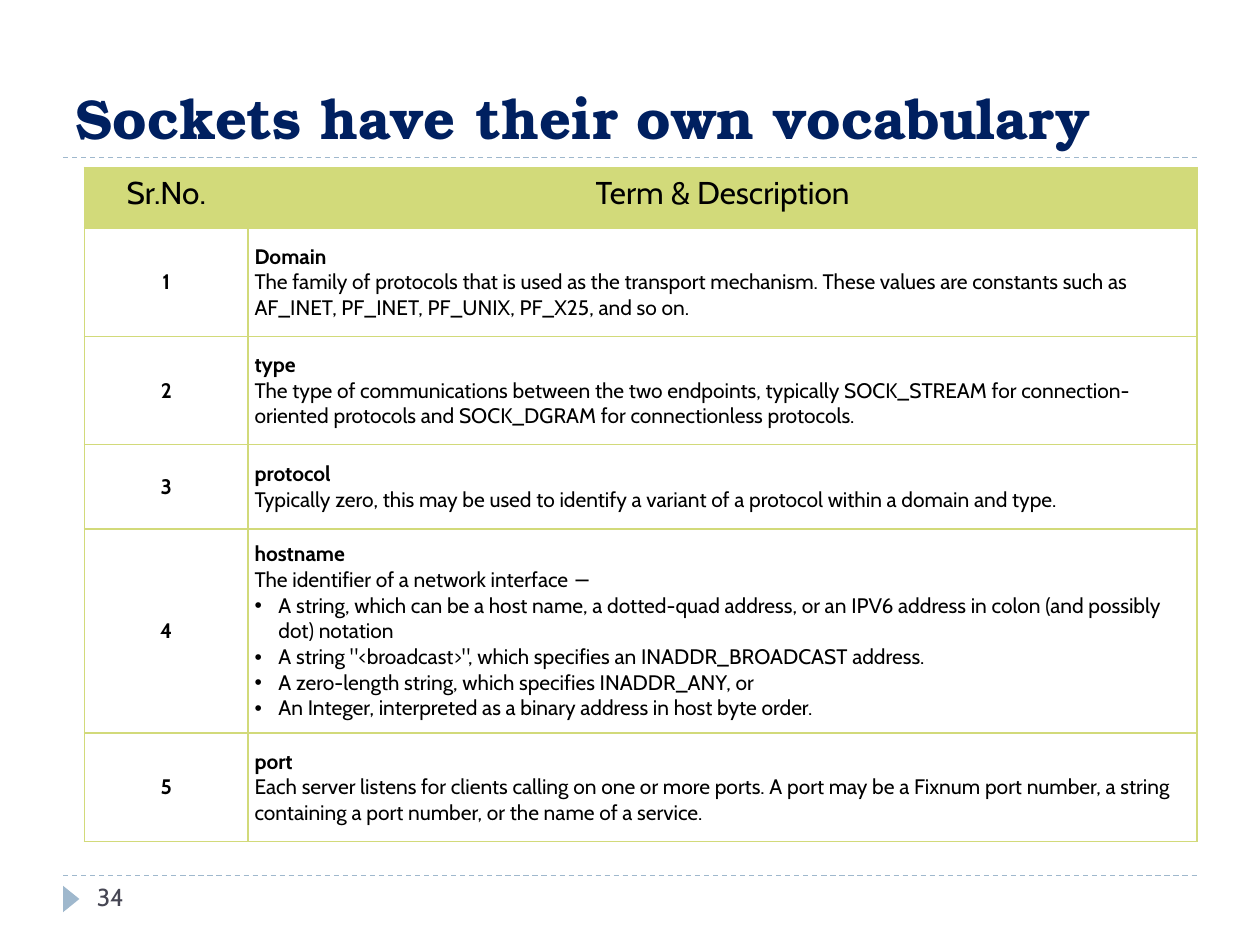
from lxml.etree import SubElement
from pptx import Presentation
from pptx.dml.color import RGBColor
from pptx.enum.dml import MSO_LINE
from pptx.enum.shapes import MSO_CONNECTOR, MSO_SHAPE
from pptx.enum.text import MSO_ANCHOR, MSO_AUTO_SIZE, PP_ALIGN
from pptx.oxml.ns import qn
from pptx.util import Inches, Pt

NAVY = RGBColor(0x00, 0x20, 0x60)
BLUE = RGBColor(0x9F, 0xB8, 0xCD)
GREY = RGBColor(0x46, 0x46, 0x53)
LIME = RGBColor(0xD2, 0xDA, 0x7A)
BLACK = RGBColor(0, 0, 0)

HEADS = ["Sr.No.", "Term & Description"]
COLS = [1.3, 7.53]
ROWS = [0.48, 0.86, 0.86, 0.67, 1.62, 0.86]
# Term, description, bullets
TERMS = [
    ("Domain", "The family of protocols that is used as the transport mechanism. "
     "These values are constants such as AF_INET, PF_INET, PF_UNIX, PF_X25, and so on.", []),
    ("type", "The type of communications between the two endpoints, typically SOCK_STREAM "
     "for connection-oriented protocols and SOCK_DGRAM for connectionless protocols.", []),
    ("protocol", "Typically zero, this may be used to identify a variant of a protocol "
     "within a domain and type.", []),
    ("hostname", "The identifier of a network interface −", [
        "A string, which can be a host name, a dotted-quad address, or an IPV6 address "
        "in colon (and possibly dot) notation",
        'A string "<broadcast>", which specifies an INADDR_BROADCAST address.',
        "A zero-length string, which specifies INADDR_ANY, or",
        "An Integer, interpreted as a binary address in host byte order."]),
    ("port", "Each server listens for clients calling on one or more ports. A port may be a "
     "Fixnum port number, a string containing a port number, or the name of a service.", []),
]


def write(frame, text, first=True, size=12, color=BLACK, face="Cabin",
          bold=False, align=PP_ALIGN.LEFT, bullet=False):
    """Put text in the first paragraph of a frame, or in a new one."""
    para = frame.paragraphs[0] if first else frame.add_paragraph()
    if bullet:
        props = para._p.get_or_add_pPr()
        props.set("marL", str(Inches(0.19)))
        props.set("indent", str(-Inches(0.19)))
        SubElement(props, qn("a:buFont"), typeface="Arial")
        SubElement(props, qn("a:buChar"), char="•")
    para.alignment = align
    run = para.add_run()
    run.text = text
    font = run.font
    font.name, font.size, font.bold = face, Pt(size), bold
    font.color.rgb = color


class Deck:
    def __init__(self):
        self.file = Presentation()
        self.file.slide_width, self.file.slide_height = Inches(10), Inches(7.5)
        self.slide = self.file.slides.add_slide(self.file.slide_layouts[5])
        self.shapes = self.slide.shapes

    def rule(self, y):
        line = self.shapes.add_connector(
            MSO_CONNECTOR.STRAIGHT, Inches(0.5), Inches(y), Inches(9.5), Inches(y))
        line.line.color.rgb = BLUE
        line.line.width = Pt(0.75)
        line.line.dash_style = MSO_LINE.DASH
        SubElement(line._element.spPr, qn("a:effectLst"))

    def marker(self, x, y, w, h):
        mark = self.shapes.add_shape(
            MSO_SHAPE.ISOSCELES_TRIANGLE, Inches(x), Inches(y), Inches(w), Inches(h))
        mark.rotation = 90
        mark.shadow.inherit = False
        mark.fill.solid()
        mark.fill.fore_color.rgb = BLUE
        mark.line.fill.background()

    def title(self, text, x, y, w, h):
        head = self.shapes.title
        head.left, head.top, head.width, head.height = map(Inches, (x, y, w, h))
        frame = head.text_frame
        frame.auto_size = MSO_AUTO_SIZE.NONE
        frame.vertical_anchor = MSO_ANCHOR.BOTTOM
        write(frame, text, size=32, color=NAVY, face="TeX Gyre Bonum", bold=True)

    def label(self, text, x, y, w, h, **style):
        frame = self.shapes.add_textbox(*map(Inches, (x, y, w, h))).text_frame
        frame.word_wrap = True
        write(frame, text, **style)

    def table(self, x, y, cols, rows):
        grid = self.shapes.add_table(
            len(rows), len(cols), Inches(x), Inches(y),
            Inches(sum(cols)), Inches(sum(rows))).table
        grid.first_row = grid.horz_banding = False
        for col, width in zip(grid.columns, cols):
            col.width = Inches(width)
        for row, height in zip(grid.rows, rows):
            row.height = Inches(height)
        for cell in grid.iter_cells():
            self.frame(cell)
        return grid

    def frame(self, cell):
        """Give a cell its margins, borders and empty fill."""
        cell.margin_left = cell.margin_right = Inches(0.05)
        cell.margin_top = cell.margin_bottom = Inches(0.05)
        cell.vertical_anchor = MSO_ANCHOR.MIDDLE
        props = cell._tc.get_or_add_tcPr()
        for side in ("a:lnL", "a:lnR", "a:lnT", "a:lnB"):
            edge = SubElement(props, qn(side), w=str(Pt(1)))
            fill = SubElement(edge, qn("a:solidFill"))
            SubElement(fill, qn("a:srgbClr"), val=str(LIME))
        cell.fill.background()


def main():
    deck = Deck()

    # Rules, page marker and number
    deck.rule(6.95)
    deck.rule(1.25)
    deck.marker(0.46, 7.07, 0.21, 0.13)
    deck.title("Sockets have their own vocabulary", 0.5, 0.17, 9.17, 1.08)
    deck.label("34", 0.67, 6.95, 2.17, 0.4, size=14, color=GREY)

    # Table header
    grid = deck.table(0.67, 1.33, COLS, ROWS)
    for col, text in enumerate(HEADS):
        cell = grid.cell(0, col)
        cell.vertical_anchor = MSO_ANCHOR.TOP
        cell.fill.solid()
        cell.fill.fore_color.rgb = LIME
        write(cell.text_frame, text, size=18, align=PP_ALIGN.CENTER)

    # Numbered terms
    for row, (term, about, points) in enumerate(TERMS, 1):
        write(grid.cell(row, 0).text_frame, str(row), bold=True, align=PP_ALIGN.CENTER)
        body = grid.cell(row, 1).text_frame
        write(body, term, bold=True)
        write(body, about, first=False)
        for point in points:
            write(body, point, first=False, bullet=True)

    deck.file.save("out.pptx")


if __name__ == "__main__":
    main()
